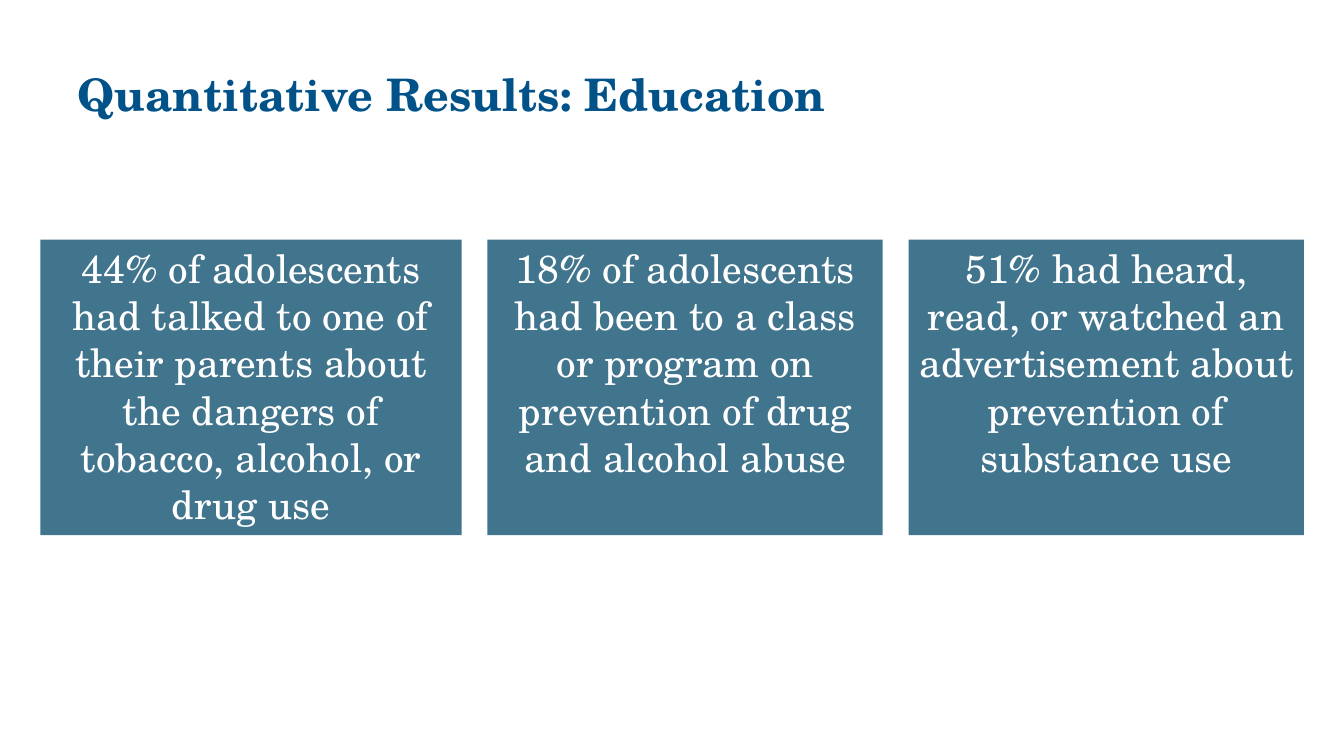
from pptx import Presentation
from pptx.dml.color import RGBColor as Rgb
from pptx.enum.shapes import MSO_SHAPE as Kind
from pptx.enum.text import MSO_ANCHOR as Anchor, MSO_AUTO_SIZE as Fit, PP_ALIGN as Align
from pptx.util import Pt

HUES = {"title": "005288", "card": "41748D", "text": "FFFFFF"}
FONT = "TeX Gyre Schola"


class Deck:
    """Holds the style and the current slide."""

    def __init__(self, wide, high):
        self.deck = Presentation()
        self.deck.slide_width, self.deck.slide_height = Pt(wide), Pt(high)
        self.slide = self.deck.slides.add_slide(self.deck.slide_layouts[5])

    def label(self, frame, text, size, hue, align, anchor, bold=False):
        frame.word_wrap = True
        frame.auto_size = Fit.NONE
        frame.vertical_anchor = anchor
        para = frame.paragraphs[0]
        para.alignment = align
        run = para.add_run()
        run.text = text
        font = run.font
        font.name, font.size, font.bold = FONT, Pt(size), bold
        font.color.rgb = Rgb.from_string(HUES[hue])

    def title(self, text, left, top, wide, high):
        box = self.slide.shapes.title
        box.left, box.top, box.width, box.height = map(Pt, (left, top, wide, high))
        self.label(box.text_frame, text, 32, "title", Align.LEFT, Anchor.MIDDLE, True)

    def card(self, text, left, top, wide, high):
        box = self.slide.shapes.add_shape(
            Kind.RECTANGLE, Pt(left), Pt(top), Pt(wide), Pt(high))
        box.shadow.inherit = False
        box.fill.solid()
        box.fill.fore_color.rgb = Rgb.from_string(HUES["card"])
        box.line.fill.background()
        self.label(box.text_frame, text, 28, "text", Align.CENTER, Anchor.TOP)


def main():
    deck = Deck(960, 540)

    # Heading
    deck.title("Quantitative Results: Education", 48, 21.6, 864, 90)

    # Row of finding cards, the first one wider
    cards = [
        (301, "44% of adolescents had talked to one of their parents about "
              "the dangers of tobacco, alcohol, or drug use"),
        (282.4, "18% of adolescents had been to a class or program on "
                "prevention of drug and alcohol abuse"),
        (282.4, "51% had heard, read, or watched an advertisement about "
                "prevention of substance use"),
    ]
    left, gap = 28.8, 18.4
    for wide, text in cards:
        deck.card(text, left, 171.2, wide, 211)
        left += wide + gap

    deck.deck.save("out.pptx")


if __name__ == "__main__":
    main()
